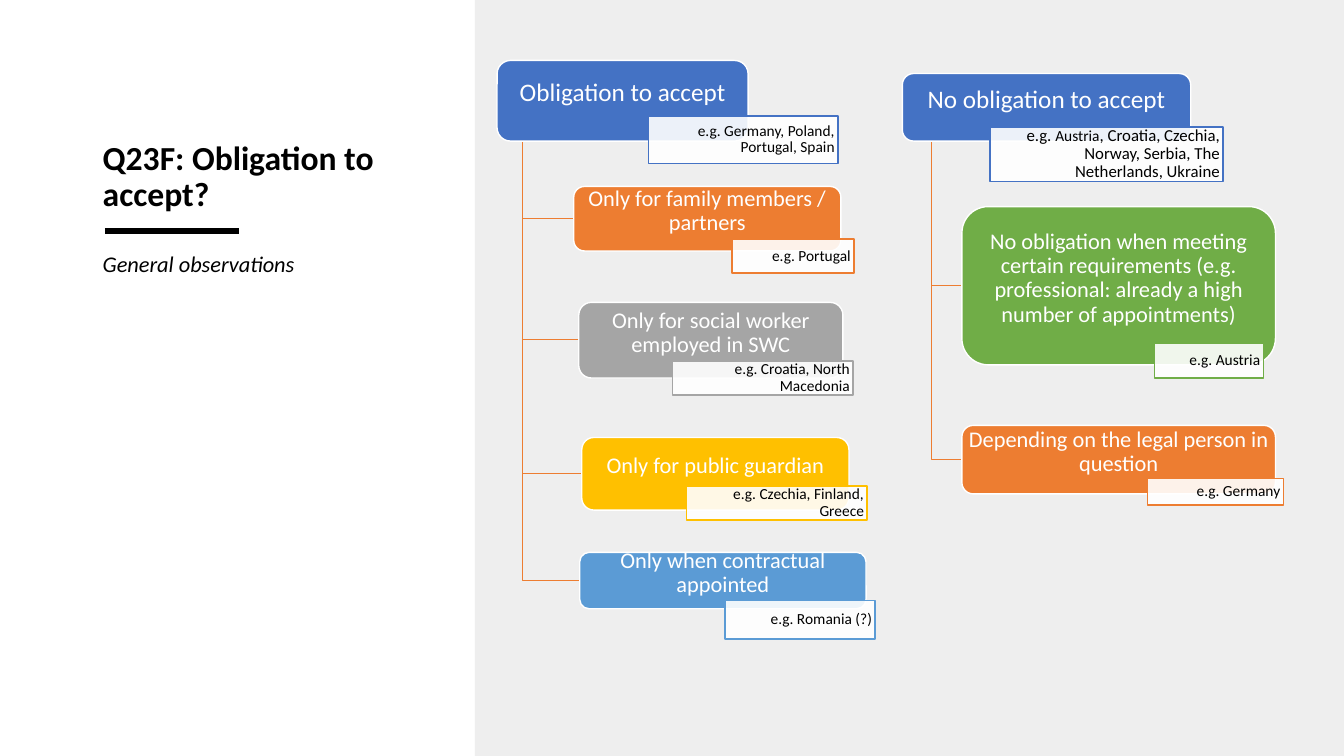
from lxml.etree import SubElement
from pptx import Presentation
from pptx.dml.color import RGBColor as RGB
from pptx.enum.shapes import MSO_CONNECTOR as LINK, MSO_SHAPE as SHAPE
from pptx.enum.text import MSO_ANCHOR as ANCHOR, PP_ALIGN as ALIGN
from pptx.oxml.ns import qn
from pptx.util import Emu, Pt

SCALE = 9144
FONT = "Calibri"
BLACK = RGB(0, 0, 0)
WHITE = RGB(255, 255, 255)
PANEL = RGB(0xD9, 0xD9, 0xD9)
BLUE = RGB(0x44, 0x72, 0xC4)
ORANGE = RGB(0xED, 0x7D, 0x31)
GRAY = RGB(0xA5, 0xA5, 0xA5)
GOLD = RGB(0xFF, 0xC0, 0x00)
SKY = RGB(0x5B, 0x9B, 0xD5)
GREEN = RGB(0x70, 0xAD, 0x47)

ACCEPT = [
    ("Obligation to accept", BLUE, (493, 60, 249, 80),
     ["e.g. Germany, Poland, Portugal, Spain"], (643, 115, 188, 47)),
    ("Only for family members / partners", ORANGE, (569, 185, 265, 64),
     ["e.g. Portugal"], (726, 237, 121, 34)),
    ("Only for social worker employed in SWC", GRAY, (574, 300, 262, 75),
     ["e.g. Croatia, North Macedonia"], (667, 358, 179, 34)),
    ("Only for public guardian", GOLD, (577, 434, 265, 72),
     ["e.g. Czechia, Finland, Greece"], (681, 482, 179, 34)),
    ("Only when contractual appointed", SKY, (575, 548, 284, 56),
     ["e.g. Romania (?)"], (719, 596, 149, 38)),
]
REFUSE = [
    ("No obligation to accept", BLUE, (895, 73, 286, 67),
     ["e.g. ", "Austria",
      ", Croatia, Czechia, Norway, Serbia, The Netherlands, Ukraine"],
     (982, 126, 231, 54)),
    ("No obligation when meeting certain requirements "
     "(e.g. professional: already a high number of appointments)",
     GREEN, (954, 205, 311, 157), ["e.g. Austria"], (1145, 341, 108, 34)),
    ("Depending on the legal person in question", ORANGE,
     (954, 422, 311, 68), ["e.g. Germany"], (1138, 475, 135, 26)),
]


def px(*sizes):
    return [Emu(size * SCALE) for size in sizes]


def fade(shape, share):
    color = shape.fill._xPr.find(qn("a:solidFill"))[0]
    SubElement(color, qn("a:alpha"), val=str(share * 1000))


def block(slide, kind, area, fill, edge=None):
    shape = slide.shapes.add_shape(kind, *px(*area))
    shape.shadow.inherit = False
    shape.fill.solid()
    shape.fill.fore_color.rgb = fill
    if edge is None:
        shape.line.fill.background()
    else:
        shape.line.color.rgb = edge
        shape.line.width = Pt(1)
    return shape


def write(shape, parts, size, color, align, anchor, inset):
    frame = shape.text_frame
    frame.word_wrap = True
    frame.vertical_anchor = anchor
    (frame.margin_left, frame.margin_top,
     frame.margin_right, frame.margin_bottom) = px(*inset)
    para = frame.paragraphs[0]
    para.alignment = align
    para.line_spacing = 0.9
    for part in parts:
        para.add_run().text = part
    font = para.font
    font.name = FONT
    font.color.rgb = color
    if size:
        font.size = Pt(size)
    return para


def label(slide, area, text, size, anchor):
    box = slide.shapes.add_textbox(*px(*area))
    return write(box, [text], size, BLACK, ALIGN.LEFT, anchor, (10, 5, 10, 5))


def branch(slide, root, child):
    left, top, width, height = root
    trunk = left + round(width / 10)
    base = top + height
    side, head, _, tall = child
    mid = head + tall // 2
    pen = slide.shapes.build_freeform(trunk, base, scale=SCALE)
    pen.add_line_segments([(trunk, mid), (side, mid)], close=False)
    shape = pen.convert_to_shape()
    shape.shadow.inherit = False
    shape.fill.background()
    shape.line.color.rgb = ORANGE
    shape.line.width = Pt(1)


def node(slide, text, size, color, area, parts, spot):
    box = block(slide, SHAPE.ROUNDED_RECTANGLE, area, color, WHITE)
    write(box, [text], size, WHITE, ALIGN.CENTER, ANCHOR.MIDDLE, (1, 1, 1, 15))
    note = block(slide, SHAPE.RECTANGLE, spot, WHITE, color)
    fade(note, 90)
    mixed = len(parts) > 1
    para = write(note, parts, None if mixed else 11, BLACK,
                 ALIGN.RIGHT, ANCHOR.MIDDLE, (3, 1, 3, 1))
    if mixed:
        for run, points in zip(para.runs, (12, 11, 12)):
            run.font.size = Pt(points)


def tree(slide, nodes):
    root = nodes[0][2]
    for item in nodes[1:]:
        branch(slide, root, item[2])
    for rank, (text, *rest) in enumerate(nodes):
        node(slide, text, 16 if rank else 18, *rest)


def rule(slide, start, end):
    line = slide.shapes.add_connector(LINK.STRAIGHT, *px(*start, *end))
    line.line.color.rgb = BLACK
    line.line.width = Pt(4.5)
    SubElement(line._element.spPr, qn("a:effectLst"))


def main():
    deck = Presentation()
    deck.slide_width, deck.slide_height = px(1333, 750)
    slide = deck.slides.add_slide(deck.slide_layouts[6])
    panel = block(slide, SHAPE.RECTANGLE, (471, 0, 862, 750), PANEL)
    fade(panel, 44)
    rule(slide, (104, 229), (237, 229))
    tree(slide, ACCEPT)
    tree(slide, REFUSE)
    title = label(slide, (92, 65, 361, 152), "Q23F: Obligation to accept?",
                  24, ANCHOR.BOTTOM)
    title.font.bold = True
    notes = label(slide, (92, 246, 361, 52), "General observations",
                  16, ANCHOR.TOP)
    notes.font.italic = True
    deck.save("out.pptx")


if __name__ == "__main__":
    main()
